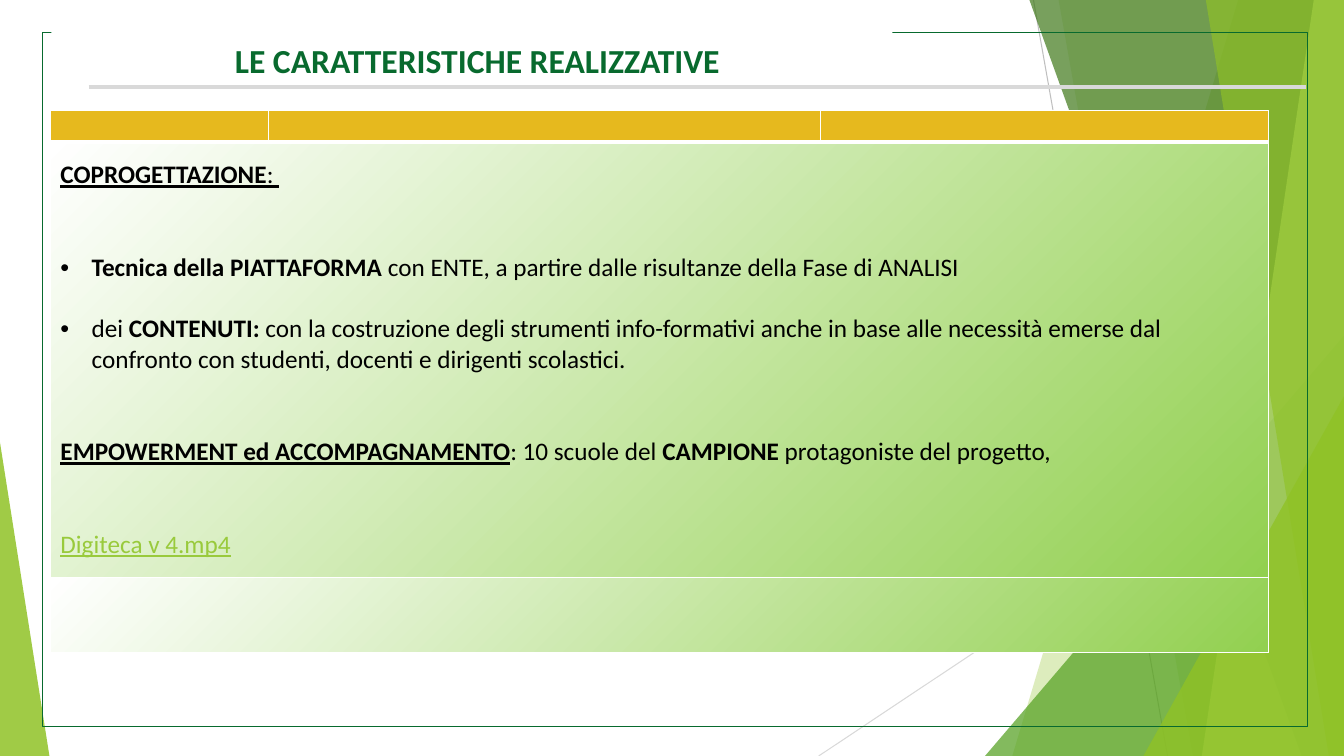
from lxml import etree
from pptx import Presentation
from pptx.dml.color import RGBColor
from pptx.enum.shapes import MSO_CONNECTOR, MSO_SHAPE
from pptx.enum.text import MSO_ANCHOR, MSO_AUTO_SIZE, PP_ALIGN
from pptx.oxml.ns import qn
from pptx.util import Inches, Pt

STRAIGHT = MSO_CONNECTOR.STRAIGHT
RECTANGLE, TRIANGLE = MSO_SHAPE.RECTANGLE, MSO_SHAPE.ISOSCELES_TRIANGLE
MIDDLE, BOTTOM = MSO_ANCHOR.MIDDLE, MSO_ANCHOR.BOTTOM
CENTER, NO_AUTOFIT = PP_ALIGN.CENTER, MSO_AUTO_SIZE.NONE

WHITE = RGBColor(0xFF, 0xFF, 0xFF)
BLACK = RGBColor(0x00, 0x00, 0x00)
GREY = RGBColor(0xBF, 0xBF, 0xBF)
LIGHT_GREY = RGBColor(0xD9, 0xD9, 0xD9)
DARK_GREEN = RGBColor(0x08, 0x6A, 0x2E)
LEAF = RGBColor(0x90, 0xC2, 0x26)
GRASS = RGBColor(0x54, 0xA0, 0x21)
FOREST = RGBColor(0x3F, 0x78, 0x19)
LIME = RGBColor(0xC0, 0xE4, 0x74)
GOLD = RGBColor(0xE6, 0xB9, 0x1E)
CELL_GREEN = RGBColor(0x92, 0xD0, 0x50)
LINK_GREEN = RGBColor(0x99, 0xCA, 0x3C)

WIDTH, HEIGHT = 13.33, 7.5
FONT = "Calibri"

prs = Presentation()
prs.slide_width, prs.slide_height = Inches(WIDTH), Inches(HEIGHT)
slide = prs.slides.add_slide(prs.slide_layouts[5])
shapes = slide.shapes


def add_rule(x1, y1, x2, y2, color, width):
    rule = shapes.add_connector(STRAIGHT, Inches(x1), Inches(y1), Inches(x2), Inches(y2))
    rule.line.color.rgb = color
    rule.line.width = Pt(width)
    etree.SubElement(rule._element.spPr, qn("a:effectLst"))


def set_borders(cell, bottom_width):
    tc_pr = cell._tc.get_or_add_tcPr()
    for index, side in enumerate(("lnL", "lnR", "lnT", "lnB")):
        width = bottom_width if side == "lnB" else 1
        border = etree.Element(qn(f"a:{side}"), w=str(Pt(width)))
        fill = etree.SubElement(border, qn("a:solidFill"))
        etree.SubElement(fill, qn("a:srgbClr"), val=str(WHITE))
        tc_pr.insert(index, border)


# Background: thin lines, then translucent green shards
add_rule(10.25, 0, 11.58, HEIGHT, GREY, 0.75)
add_rule(WIDTH, 4.03, 8.12, HEIGHT, LIGHT_GREY, 0.75)

# Bands give the top and bottom x of their left edge; triangles give
# left, top, width and the place of the apex
shards = [
    (LEAF, 30, (12.28, 10.04)),
    (LEAF, 20, (10.5, 11.83)),
    (GRASS, 72, (9.77, 3.33, 3.56, 1)),
    (FOREST, 70, (10.21, 12.91)),
    (LIME, 70, (13.03, 11.92)),
    (LEAF, 65, (11.96, 13.18)),
    (LEAF, 80, (11.34, 3.93, 1.99, 1)),
    (LEAF, 85, (0, 4.39, 0.49, 0)),
]
for color, opacity, geometry in shards:
    if len(geometry) == 2:
        top_x, bottom_x = geometry
        outline = shapes.build_freeform(Inches(top_x), 0)
        corners = [(WIDTH, 0), (WIDTH, HEIGHT), (bottom_x, HEIGHT)]
        outline.add_line_segments([(Inches(x), Inches(y)) for x, y in corners])
        shard = outline.convert_to_shape()
    else:
        left, top, width, apex = geometry
        shard = shapes.add_shape(
            TRIANGLE, Inches(left), Inches(top), Inches(width), Inches(HEIGHT - top))
        shard.adjustments[0] = apex
    shard.shadow.inherit = False
    shard.line.fill.background()
    shard.fill.solid()
    shard.fill.fore_color.rgb = color
    color_node = shard._element.spPr.find(qn("a:solidFill"))[0]
    etree.SubElement(color_node, qn("a:alpha"), val=str(opacity * 1000))

# Rule under the title and frame around the content
add_rule(0.88, 0.86, 12.95, 0.86, LIGHT_GREY, 3)
frame = shapes.add_shape(RECTANGLE, Inches(0.42), Inches(0.32), Inches(12.55), Inches(6.89))
frame.shadow.inherit = False
frame.fill.background()
frame.line.color.rgb = DARK_GREEN
frame.line.width = Pt(0.5)

# Table: gold header row, two merged rows with a gradient
column_widths = (2.16, 5.48, 4.44)
row_heights = (0.31, 4.32, 0.74)
features = shapes.add_table(
    3, 3, Inches(0.5), Inches(1.1), Inches(sum(column_widths)), Inches(sum(row_heights))).table
for column, width in zip(features.columns, column_widths):
    column.width = Inches(width)
for row, height in zip(features.rows, row_heights):
    row.height = Inches(height)

for row_index in range(3):
    for column_index in range(3):
        cell = features.cell(row_index, column_index)
        if row_index == 0:
            cell.margin_top = cell.margin_bottom = 0
            cell.fill.solid()
            cell.fill.fore_color.rgb = GOLD
        else:
            cell.fill.gradient()
            cell.fill.gradient_angle = 315
            for stop, color in zip(cell.fill.gradient_stops, (WHITE, CELL_GREEN)):
                stop.color.rgb = color
        set_borders(cell, 3 if row_index == 0 else 1)
for row_index in (1, 2):
    features.cell(row_index, 0).merge(features.cell(row_index, 2))

# Text of the large cell: space before, bullet, colour, runs (text, bold, underline)
LINE = 22
content = [
    (0, False, BLACK, [("COPROGETTAZIONE", True, True), (": ", False, True)]),
    (2 * LINE, True, BLACK, [
        ("Tecnica della PIATTAFORMA ", True, False),
        ("con ENTE, a partire dalle risultanze della Fase di ANALISI", False, False)]),
    (LINE, True, BLACK, [
        ("dei", False, False),
        (" CONTENUTI:", True, False),
        (" con la costruzione degli strumenti info-formativi anche in base alle necessità "
         "emerse dal confronto con studenti, docenti e dirigenti scolastici.", False, False)]),
    (2 * LINE, False, BLACK, [
        ("EMPOWERMENT ed ACCOMPAGNAMENTO", True, True),
        (": 10 scuole del ", False, False),
        ("CAMPIONE", True, False),
        (" protagoniste del progetto,", False, False)]),
    (2 * LINE, False, LINK_GREEN, [("Digiteca v 4.mp4", False, True)]),
]
content_cell = features.cell(1, 0)
content_cell.vertical_anchor = MIDDLE
content_cell.margin_top = content_cell.margin_bottom = Inches(0.04)
content_frame = content_cell.text_frame
for index, (space, bulleted, color, runs) in enumerate(content):
    paragraph = content_frame.add_paragraph() if index else content_frame.paragraphs[0]
    if space:
        paragraph.space_before = Pt(space)
    if bulleted:
        p_pr = paragraph._p.get_or_add_pPr()
        p_pr.set("marL", str(Inches(0.31)))
        p_pr.set("indent", str(-Inches(0.31)))
        etree.SubElement(p_pr, qn("a:buFont"), typeface="Arial")
        etree.SubElement(p_pr, qn("a:buChar"), char="•")
    paragraph.font.name = FONT
    paragraph.font.size = Pt(18)
    paragraph.font.color.rgb = color
    for text, bold, underline in runs:
        run = paragraph.add_run()
        run.text = text
        run.font.bold = bold
        run.font.underline = underline

# Title, in front so that its white fill hides part of the frame
title = shapes.title
shapes._spTree.append(title._element)
title.left, title.top = Inches(0.51), Inches(0.23)
title.width, title.height = Inches(8.34), Inches(0.61)
title.fill.solid()
title.fill.fore_color.rgb = WHITE
title_frame = title.text_frame
title_frame.text = "LE CARATTERISTICHE REALIZZATIVE"
title_frame.auto_size = NO_AUTOFIT
title_frame.vertical_anchor = BOTTOM
title_frame.margin_left, title_frame.margin_right = Inches(0.11), 0
title_frame.margin_top, title_frame.margin_bottom = 0, Inches(0.04)
heading = title_frame.paragraphs[0]
heading.alignment = CENTER
heading.font.name = FONT
heading.font.size = Pt(24)
heading.font.bold = True
heading.font.color.rgb = DARK_GREEN

prs.save("out.pptx")
